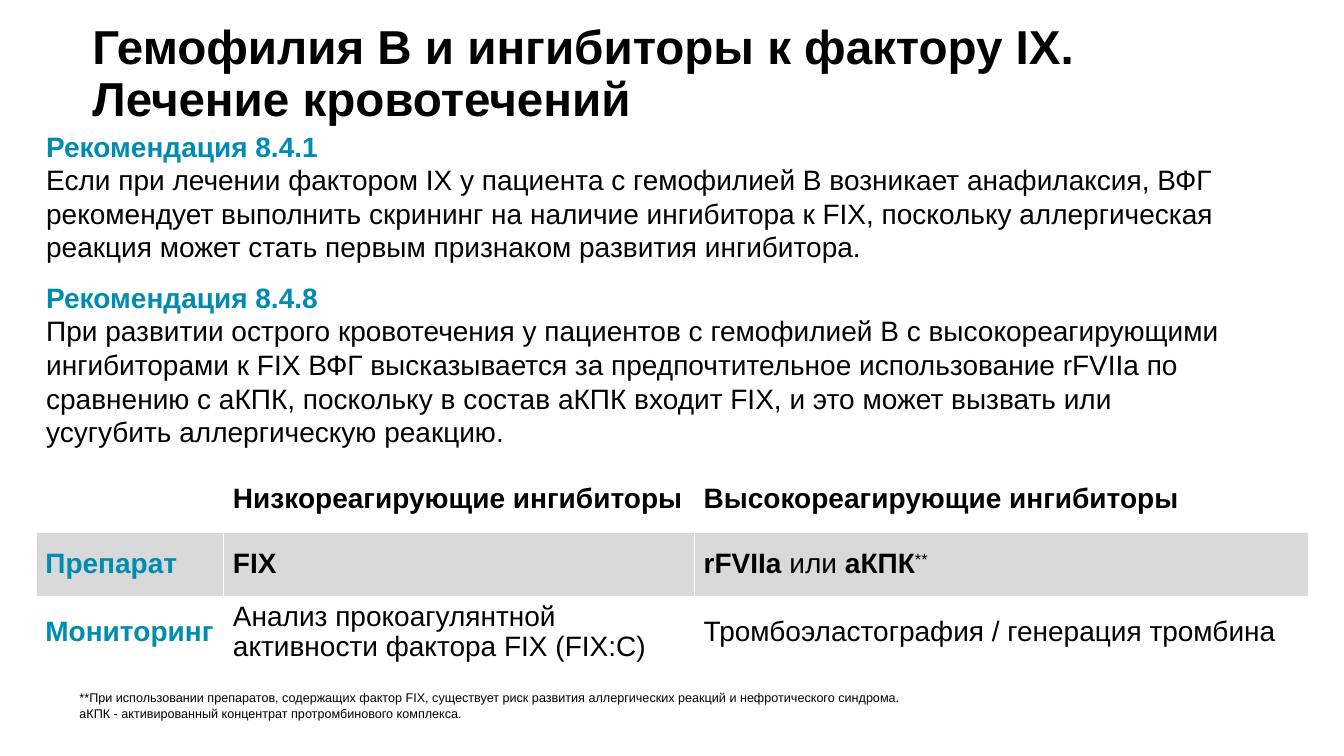
from pptx import Presentation, util as u
from pptx.dml.color import RGBColor
from pptx.enum import text

Pt = u.Pt
COLORS = {"ink": "000000", "accent": "008BB0", "white": "FFFFFF", "band": "D9D9D9"}


class Deck:
    def __init__(self, width, height, font):
        self.prs = Presentation()
        self.prs.slide_width, self.prs.slide_height = Pt(width), Pt(height)
        self.font = font
        self.s = None

    def add_slide(self):
        self.s = self.prs.slides.add_slide(self.prs.slide_layouts[6])

    def set_margins(self, target, margins):
        for side, value in zip(("left", "top", "right", "bottom"), margins):
            setattr(target, f"margin_{side}", Pt(value))

    def run(self, p, words, size, color="ink", bold=False, raised=False):
        for i, line in enumerate(words.split("\n")):
            if i:
                p.add_line_break()
            r = p.add_run()
            r.text = line
            formats = {"name": self.font, "size": Pt(size), "bold": bold}
            for key, value in formats.items():
                setattr(r.font, key, value)
            r.font.color.rgb = RGBColor.from_string(COLORS[color])
            if raised:
                r._r.get_or_add_rPr().set("baseline", "30000")

    def paragraphs(self, tf, items, size, **formats):
        for i, (runs, gap) in enumerate(items):
            p = tf.add_paragraph() if i else tf.paragraphs[0]
            values = {"alignment": text.PP_ALIGN.LEFT, "space_before": Pt(gap), **formats}
            for key, value in values.items():
                setattr(p, key, value)
            for words, style in runs:
                self.run(p, words, size, **style)

    def textbox(self, box, items, size, anchor="TOP", margins=(7.2, 3.6, 7.2, 3.6), **formats):
        tf = self.s.shapes.add_textbox(*map(Pt, box)).text_frame
        tf.word_wrap = True
        tf.vertical_anchor = text.MSO_ANCHOR[anchor]
        self.set_margins(tf, margins)
        self.paragraphs(tf, items, size, **formats)

    def table(self, left, top, widths, heights, rows, fills, size):
        shape = self.s.shapes.add_table(len(rows), len(widths), Pt(left), Pt(top),
                                        Pt(sum(widths)), Pt(sum(heights)))
        tbl = shape.table
        tbl.first_row = tbl.horz_banding = False
        for col, width in zip(tbl.columns, widths):
            col.width = Pt(width)
        for i, (height, row, fill) in enumerate(zip(heights, rows, fills)):
            tbl.rows[i].height = Pt(height)
            for j, runs in enumerate(row):
                cell = tbl.cell(i, j)
                cell.fill.solid()
                cell.fill.fore_color.rgb = RGBColor.from_string(COLORS[fill])
                cell.vertical_anchor = text.MSO_ANCHOR.MIDDLE
                self.set_margins(cell, (6.5, 2.15, 6.5, 2.15))
                self.paragraphs(cell.text_frame, [(runs, 0)], size, line_spacing=0.96)

    def save(self):
        self.prs.save("out.pptx")


def main():
    plain, bold = {}, {"bold": True}
    label = {"bold": True, "color": "accent"}
    recommendations = [
        ("Рекомендация 8.4.1",
         "Если при лечении фактором IX у пациента с гемофилией В возникает анафилаксия, ВФГ "
         "рекомендует выполнить скрининг на наличие ингибитора к FIX, поскольку аллергическая "
         "реакция может стать первым признаком развития ингибитора."),
        ("Рекомендация 8.4.8",
         "При развитии острого кровотечения у пациентов с гемофилией В с высокореагирующими "
         "ингибиторами к FIX ВФГ высказывается за предпочтительное использование rFVIIa по "
         "сравнению с аКПК, поскольку в состав аКПК входит FIX, и это может вызвать или "
         "усугубить аллергическую реакцию."),
    ]
    body = []
    for i, (heading, advice) in enumerate(recommendations):
        body += [([(heading, label)], 12 if i else 0), ([(advice, plain)], 0)]
    notes = [
        "**При использовании препаратов, содержащих фактор FIX, существует риск развития "
        "аллергических реакций и нефротического синдрома.",
        "аКПК - активированный концентрат протромбинового комплекса.",
    ]
    treatments = [
        [[], [("Низкореагирующие ингибиторы", bold)], [("Высокореагирующие ингибиторы", bold)]],
        [[("Препарат", label)], [("FIX", bold)],
         [("rFVIIa", bold), (" или ", plain), ("аКПК", bold), ("**", {"raised": True})]],
        [[("Мониторинг", label)],
         [("Анализ прокоагулянтной активности фактора FIX (FIX:C)", plain)],
         [("Тромбоэластография / генерация тромбина", plain)]],
    ]

    deck = Deck(960, 540, "Arial")
    deck.add_slide()
    title = "Гемофилия В и ингибиторы к фактору IX.\nЛечение кровотечений"
    deck.textbox((59, 10.8, 828, 85.7), [([(title, bold)], 0)], 34, "MIDDLE", line_spacing=0.9)
    deck.textbox((25.9, 88.6, 861, 397.4), body, 20, line_spacing=Pt(24))
    deck.textbox((49.7, 486, 781, 28.8), [([(note, plain)], 0) for note in notes], 9,
                 "BOTTOM", (7.2, 3.6, 7.2, 0))
    deck.table(25.9, 334.1, (134, 336.25, 438.5), (46.1, 46.1, 49), treatments,
               ("white", "band", "white"), 20)
    deck.save()


if __name__ == "__main__":
    main()
